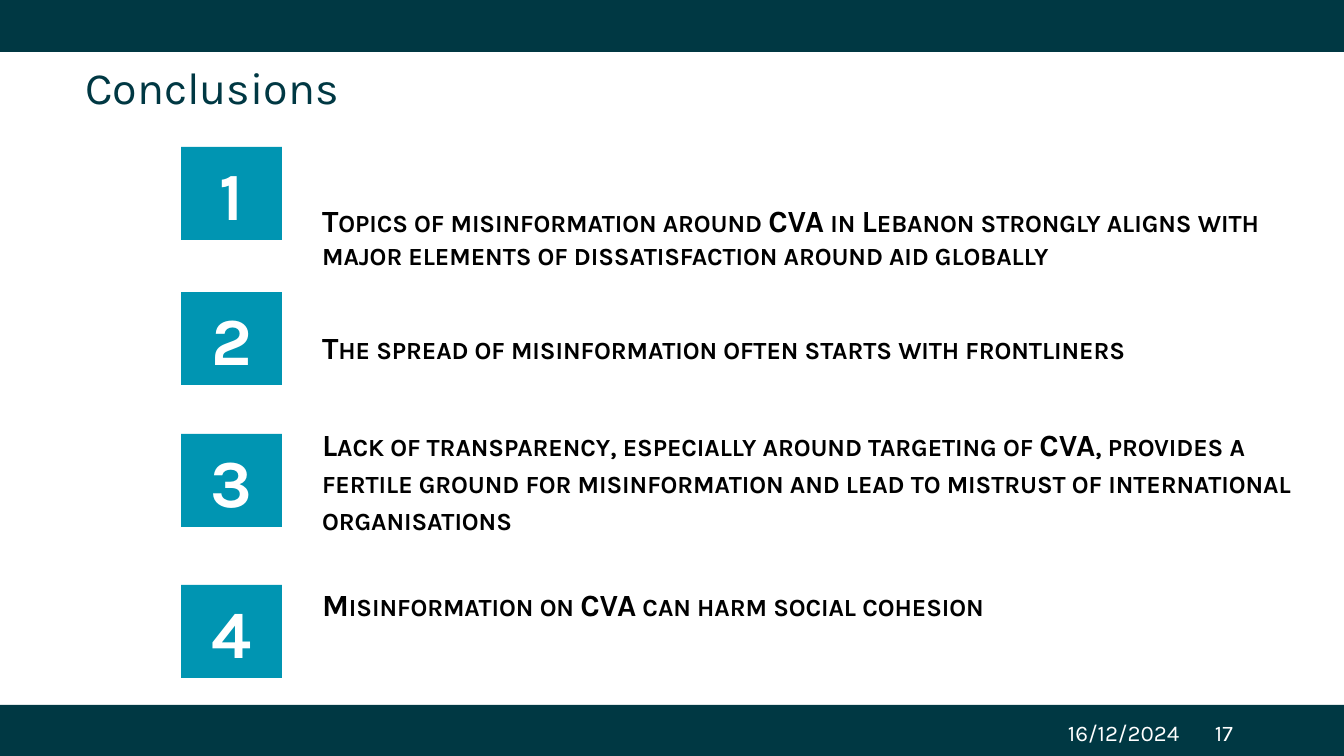
from dataclasses import dataclass

from lxml import etree
from pptx import Presentation
from pptx import util as u
from pptx.dml.color import RGBColor
from pptx.enum import shapes, text
from pptx.oxml.ns import qn

EMU_PER_PX = 914400 / 100.8
WIDTH, HEIGHT = 1344, 756
BAR_H = 55


def px(n):
    return u.Emu(round(n * EMU_PER_PX))


@dataclass(frozen=True)
class Theme:
    font: str = "Karla"
    dark: str = "003843"
    accent: str = "0095B2"
    ink: str = "000000"
    white: str = "FFFFFF"
    title: int = 32
    body: int = 22
    footer: int = 16
    number: int = 48


def write(p, words, *, font, size, color, bold=False, small_caps=False,
          align=text.PP_ALIGN.LEFT, line=1.0, before=0):
    p.alignment, p.line_spacing = align, line
    p.space_before, p.space_after = u.Pt(before), u.Pt(0)
    r = p.add_run()
    r.text = words
    f = r.font
    f.name, f.size, f.bold = font, u.Pt(size), bold
    f.color.rgb = RGBColor.from_string(color)
    if small_caps:
        r._r.get_or_add_rPr().set("cap", "small")


class Deck:
    def __init__(self, theme):
        self.theme = theme
        self.prs = Presentation()
        self.prs.slide_width, self.prs.slide_height = px(WIDTH), px(HEIGHT)
        self.s = self.prs.slides.add_slide(self.prs.slide_layouts[1])

    def frame(self, sp, anchor=text.MSO_ANCHOR.TOP):
        tf = sp.text_frame
        tf.word_wrap, tf.auto_size = True, text.MSO_AUTO_SIZE.NONE
        tf.vertical_anchor = anchor
        return tf

    def place(self, sp, x, y, w, h):
        sp.left, sp.top, sp.width, sp.height = map(px, (x, y, w, h))
        return self.frame(sp)

    def rect(self, x, y, w, h, color):
        sp = self.s.shapes.add_shape(shapes.MSO_SHAPE.RECTANGLE, *map(px, (x, y, w, h)))
        sp.shadow.inherit = False
        sp.fill.solid()
        sp.fill.fore_color.rgb = RGBColor.from_string(color)
        sp.line.fill.background()
        return sp

    def title(self, words, *box):
        t = self.theme
        tf = self.place(self.s.shapes.title, *box)
        write(tf.paragraphs[0], words, font=t.font, size=t.title, color=t.dark, line=0.9)

    def points(self, items, *box, top):
        """Fill the body with (words, line spacing, space before) items."""
        t = self.theme
        tf = self.place(self.s.placeholders[1], *box)
        tf.margin_top = px(top)
        for i, (words, line, before) in enumerate(items):
            p = tf.add_paragraph() if i else tf.paragraphs[0]
            write(p, words, font=t.font, size=t.body, color=t.ink, bold=True,
                  small_caps=True, line=line, before=before)
            pPr = p._p.get_or_add_pPr()
            pPr.set("marL", "0")
            pPr.set("indent", "0")
            etree.SubElement(pPr, qn("a:buNone"))

    def number(self, n, *box):
        t = self.theme
        tf = self.frame(self.rect(*box, t.accent), text.MSO_ANCHOR.MIDDLE)
        write(tf.paragraphs[0], str(n), font=t.font, size=t.number, color=t.white,
              bold=True, align=text.PP_ALIGN.CENTER)

    def footer(self, words, *box):
        t = self.theme
        tf = self.frame(self.s.shapes.add_textbox(*map(px, box)))
        write(tf.paragraphs[0], words, font=t.font, size=t.footer, color=t.white)


def main():
    deck = Deck(Theme())
    for y in (-3, 705):
        deck.rect(0, y, WIDTH, BAR_H, deck.theme.dark)
    deck.title("Conclusions", 75, 61, 1191, 74)
    deck.points([
        ("Topics of misinformation around CVA in Lebanon strongly aligns with "
         "major elements of dissatisfaction around aid globally", 0.9, 0),
        ("The spread of misinformation often starts with frontliners", 0.9, 43),
        ("Lack of transparency, especially around targeting of CVA, provides a "
         "fertile ground for misinformation and lead to mistrust of "
         "international organisations", 1.0, 43),
        ("Misinformation on CVA can harm social cohesion", 0.9, 38),
    ], 312, 147, 1008, 530, top=59)
    for n, y in enumerate((147, 292, 434, 585), start=1):
        deck.number(n, 181, y, 101, 93)
    deck.footer("16/12/2024", 1058, 714, 147, 40)
    deck.footer("17", 1205, 714, 61, 40)
    deck.prs.save("out.pptx")


if __name__ == "__main__":
    main()
